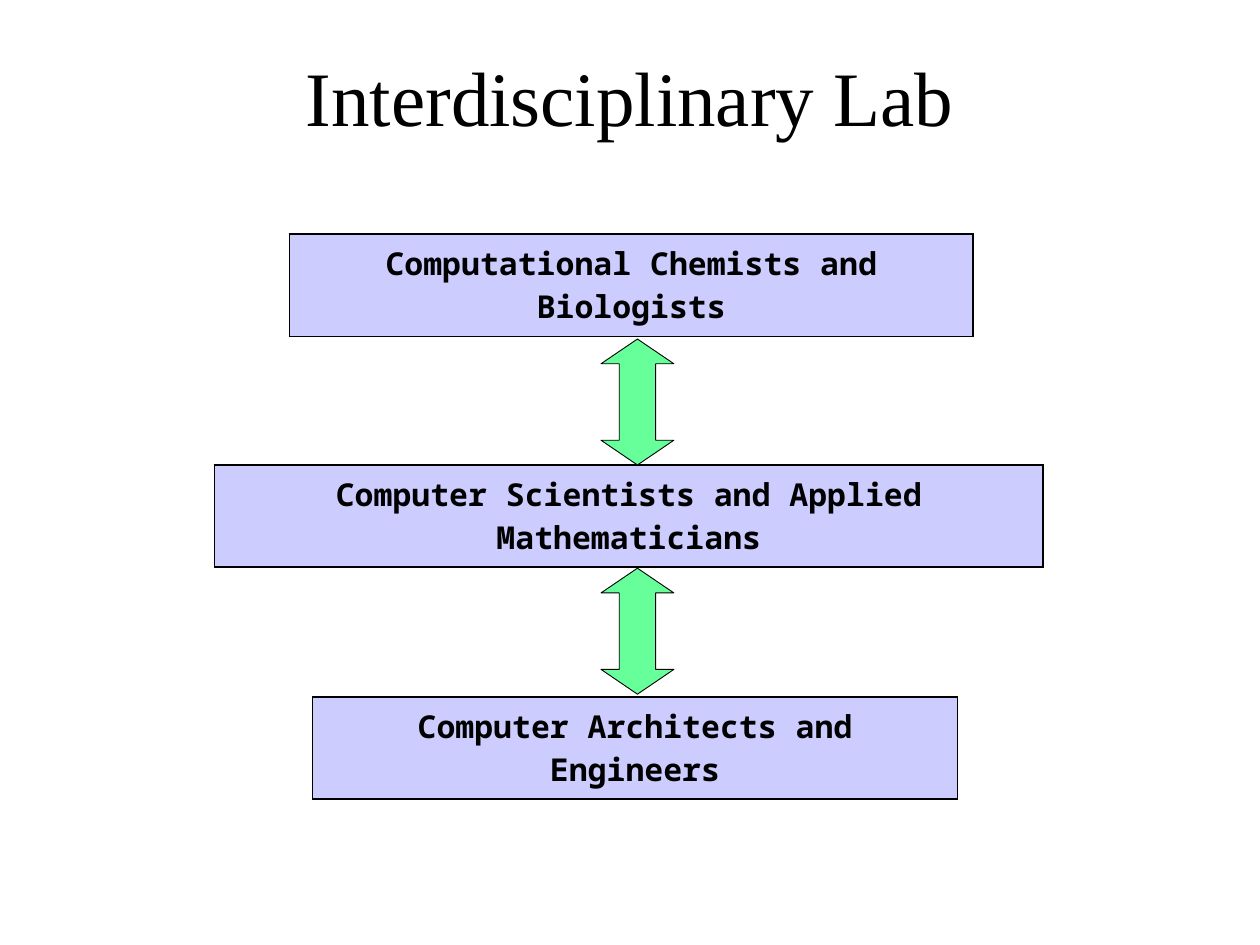
"""Build a slide of three lab groups linked by two-way arrows."""
from typing import NamedTuple

from lxml.etree import SubElement
from pptx import Presentation
from pptx.dml.color import RGBColor
from pptx.enum.shapes import MSO_SHAPE as Preset
from pptx.enum.text import MSO_ANCHOR as Anchor, PP_ALIGN as Align
from pptx.oxml.ns import qn
from pptx.slide import Slide
from pptx.util import Cm, Pt


class Group(NamedTuple):
    label: str
    left: float
    top: float
    width: float


GROUPS = (
    Group("Computational Chemists and Biologists", 5.84, 4.72, 13.77),
    Group("Computer Scientists and Applied Mathematicians", 4.32, 9.37, 16.71),
    Group("Computer Architects and Engineers", 6.3, 14.05, 13),
)
GROUP_HEIGHT = 2.06
ARROW_LEFT, ARROW_TOPS = 11.58, (7.37, 11.99)
ARROW_LENGTH, ARROW_THICKNESS = 2.54, 1.47
BLACK, LAVENDER, GREEN = "000000", "CCCCFF", "66FF99"


def color(value: str) -> RGBColor:
    return RGBColor.from_string(value)


def write(text_frame, text: str, font_name: str, size: int, bold: bool = False) -> None:
    paragraph = text_frame.paragraphs[0]
    paragraph.text = text
    paragraph.alignment = Align.CENTER
    font = paragraph.font
    font.name, font.size, font.bold = font_name, Pt(size), bold
    font.color.rgb = color(BLACK)


def add_title(slide: Slide, text: str) -> None:
    title = slide.shapes.add_textbox(0, Cm(1.07), Cm(25.4), Cm(1.7))
    title.text_frame.word_wrap = True
    title.text_frame.vertical_anchor = Anchor.MIDDLE
    write(title.text_frame, text, "Times New Roman", 44)


def add_borders(cell) -> None:
    properties = cell._tc.get_or_add_tcPr()
    for side in ("a:lnL", "a:lnR", "a:lnT", "a:lnB"):
        line = SubElement(properties, qn(side), w=str(Pt(1)))
        fill = SubElement(line, qn("a:solidFill"))
        SubElement(fill, qn("a:srgbClr"), val=BLACK)


def add_group(slide: Slide, group: Group) -> None:
    table = slide.shapes.add_table(
        1, 1, Cm(group.left), Cm(group.top), Cm(group.width), Cm(GROUP_HEIGHT)
    ).table
    table.first_row = table.horz_banding = False
    cell = table.cell(0, 0)
    add_borders(cell)
    cell.fill.solid()
    cell.fill.fore_color.rgb = color(LAVENDER)
    cell.vertical_anchor = Anchor.MIDDLE
    write(cell.text_frame, group.label, "Noto Sans Mono", 18, bold=True)


def add_arrow(slide: Slide, top: float) -> None:
    arrow = slide.shapes.add_shape(
        Preset.LEFT_RIGHT_ARROW,
        Cm(ARROW_LEFT), Cm(top), Cm(ARROW_LENGTH), Cm(ARROW_THICKNESS),
    )
    arrow.rotation = 90
    arrow.adjustments[0], arrow.adjustments[1] = 0.5, 0.34
    arrow.shadow.inherit = False
    arrow.fill.solid()
    arrow.fill.fore_color.rgb = color(GREEN)
    arrow.line.color.rgb = color(BLACK)
    arrow.line.width = Pt(0.5)


def main() -> None:
    presentation = Presentation()
    presentation.slide_width, presentation.slide_height = Cm(25.4), Cm(19.05)
    slide = presentation.slides.add_slide(presentation.slide_layouts[6])
    add_title(slide, "Interdisciplinary Lab")
    for group in GROUPS:
        add_group(slide, group)
    for top in ARROW_TOPS:
        add_arrow(slide, top)
    presentation.save("out.pptx")


if __name__ == "__main__":
    main()
